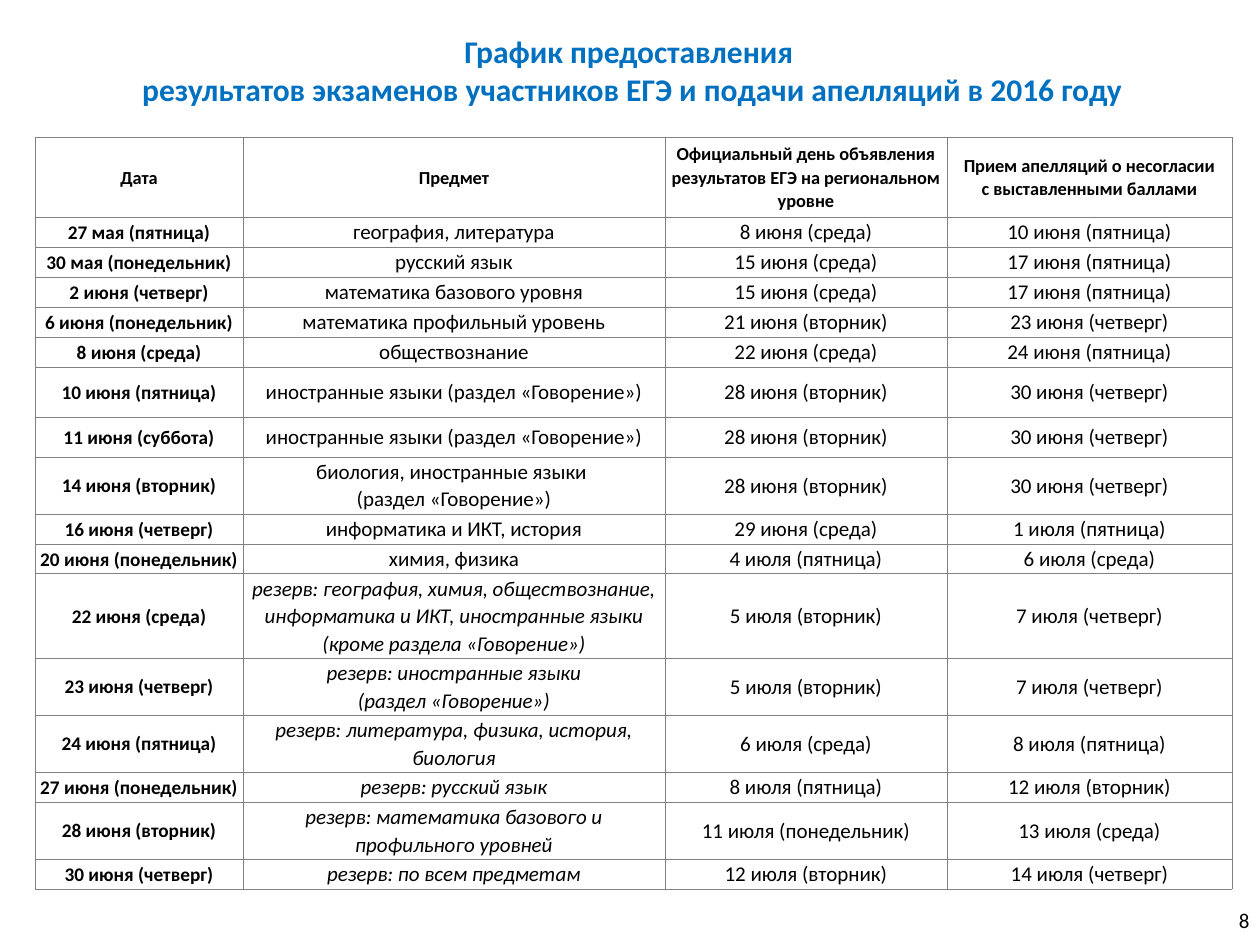
from lxml import etree
from pptx import Presentation
from pptx.dml.color import RGBColor
from pptx.enum.text import MSO_ANCHOR, MSO_AUTO_SIZE, PP_ALIGN
from pptx.oxml.ns import qn
from pptx.util import Pt

CENTER, RIGHT = PP_ALIGN.CENTER, PP_ALIGN.RIGHT
TOP, MIDDLE = MSO_ANCHOR.TOP, MSO_ANCHOR.MIDDLE
NO_FIT = MSO_AUTO_SIZE.NONE
TITLE_ONLY = 5
SCALE = 914400 / 126  # EMU in one px

# Row heights for one, two and three lines of text
ONE, TWO, THREE = 30, 57, 84
HEADER_HEIGHT = 80
COLUMNS = [208, 422, 282, 285]

HEADER = [
    "Дата",
    "Предмет",
    "Официальный день объявления результатов ЕГЭ на региональном уровне",
    "Прием апелляций о несогласии\nс выставленными баллами",
]

# Height, exam date, subject, results day, appeals day
EXAMS = [
    (ONE, "27 мая (пятница)", "география, литература", "8 июня (среда)", "10 июня (пятница)"),
    (ONE, "30 мая (понедельник)", "русский язык", "15 июня (среда)", "17 июня (пятница)"),
    (ONE, "2 июня (четверг)", "математика базового уровня", "15 июня (среда)", "17 июня (пятница)"),
    (ONE, "6 июня (понедельник)", "математика профильный уровень", "21 июня (вторник)", "23 июня (четверг)"),
    (ONE, "8 июня (среда)", "обществознание", "22 июня (среда)", "24 июня (пятница)"),
    (50, "10 июня (пятница)", "иностранные языки (раздел «Говорение»)", "28 июня (вторник)", "30 июня (четверг)"),
    (40, "11 июня (суббота)", "иностранные языки (раздел «Говорение»)", "28 июня (вторник)", "30 июня (четверг)"),
    (TWO, "14 июня (вторник)", "биология, иностранные языки \n(раздел «Говорение»)",
     "28 июня (вторник)", "30 июня (четверг)"),
    (ONE, "16 июня (четверг)", "информатика и ИКТ, история", "29 июня (среда)", "1 июля (пятница)"),
    (ONE, "20 июня (понедельник)", "химия, физика", "4 июля (пятница)", "6 июля (среда)"),
    (THREE, "22 июня (среда)",
     "резерв: география, химия, обществознание, информатика и ИКТ, "
     "иностранные языки (кроме раздела «Говорение»)",
     "5 июля (вторник)", "7 июля (четверг)"),
    (TWO, "23 июня (четверг)", "резерв: иностранные языки\n(раздел «Говорение»)",
     "5 июля (вторник)", "7 июля (четверг)"),
    (TWO, "24 июня (пятница)", "резерв: литература, физика, история, биология",
     "6 июля (среда)", "8 июля (пятница)"),
    (ONE, "27 июня (понедельник)", "резерв: русский язык", "8 июля (пятница)", "12 июля (вторник)"),
    (TWO, "28 июня (вторник)", "резерв: математика базового и профильного уровней",
     "11 июля (понедельник)", "13 июля (среда)"),
    (ONE, "30 июня (четверг)", "резерв: по всем предметам", "12 июля (вторник)", "14 июля (четверг)"),
]


def px(length):
    return round(length * SCALE)


def color(value):
    return RGBColor.from_string(value)


def set_all(target, values):
    for name, value in values.items():
        setattr(target, name, value)


class SlideBuilder:
    font = "Calibri"
    ink = "000000"
    accent = "0070C0"
    paper = "FFFFFF"
    grid = "808080"

    def __init__(self, page):
        self.page = page

    def fill_text(self, frame, text, size, ink=None, align=CENTER, spacing=None, **style):
        """Put each line of text in its own paragraph."""
        for index, line in enumerate(text.split("\n")):
            para = frame.paragraphs[0] if index == 0 else frame.add_paragraph()
            set_all(para, {"alignment": align, "line_spacing": spacing})
            span = para.add_run()
            span.text = line
            set_all(span.font, {"name": self.font, "size": Pt(size), **style})
            span.font.color.rgb = color(ink or self.ink)

    def title(self, left, top, width, height, text):
        box = self.page.shapes.title
        set_all(box, {"left": px(left), "top": px(top), "width": px(width), "height": px(height)})
        set_all(box.text_frame, {"vertical_anchor": TOP, "auto_size": NO_FIT, "word_wrap": True})
        self.fill_text(box.text_frame, text, 18, self.accent, bold=True)

    def label(self, left, top, width, height, text):
        box = self.page.shapes.add_textbox(px(left), px(top), px(width), px(height))
        set_all(box.text_frame, {"vertical_anchor": MIDDLE, "word_wrap": True})
        self.fill_text(box.text_frame, text, 12, align=RIGHT)

    def borders(self, cell):
        properties = cell._tc.get_or_add_tcPr()
        for index, side in enumerate(("a:lnL", "a:lnR", "a:lnT", "a:lnB")):
            line = etree.Element(qn(side), w=str(Pt(0.25)))
            fill = etree.SubElement(line, qn("a:solidFill"))
            etree.SubElement(fill, qn("a:srgbClr"), val=self.grid)
            properties.insert(index, line)

    def cell(self, cell, text, size, **style):
        margins = dict.fromkeys(("margin_left", "margin_right", "margin_top", "margin_bottom"), px(1))
        set_all(cell, {"vertical_anchor": MIDDLE, **margins})
        cell.fill.solid()
        cell.fill.fore_color.rgb = color(self.paper)
        self.borders(cell)
        self.fill_text(cell.text_frame, text, size, spacing=1.07, **style)

    def table(self, left, top, widths, header, records):
        heights = [HEADER_HEIGHT] + [record[0] for record in records]
        table = self.page.shapes.add_table(
            len(heights), len(widths), px(left), px(top), px(sum(widths)), px(sum(heights))
        ).table
        set_all(table, {"first_row": False, "horz_banding": False})
        for column, width in zip(table.columns, widths):
            column.width = px(width)
        for row, height in zip(table.rows, heights):
            row.height = px(height)

        for column, text in enumerate(header):
            self.cell(table.cell(0, column), text, 10.5, bold=True)
        for row, (_, *texts) in enumerate(records, start=1):
            for column, text in enumerate(texts):
                is_date = column == 0
                self.cell(table.cell(row, column), text, 11 if is_date else 12,
                          bold=is_date, italic=text.startswith("резерв"))


def main():
    deck = Presentation()
    set_all(deck, {"slide_width": px(1260), "slide_height": px(945)})
    slide = SlideBuilder(deck.slides.add_slide(deck.slide_layouts[TITLE_ONLY]))

    # Heading
    slide.title(54, 26, 1157, 89,
                "График предоставления \n"
                "результатов экзаменов участников ЕГЭ и подачи апелляций в 2016 году")

    # Schedule of exams, results and appeals
    slide.table(35, 137, COLUMNS, HEADER, EXAMS)

    # Page number
    slide.label(1209, 895, 53, 50, "8")

    deck.save("out.pptx")


if __name__ == "__main__":
    main()
